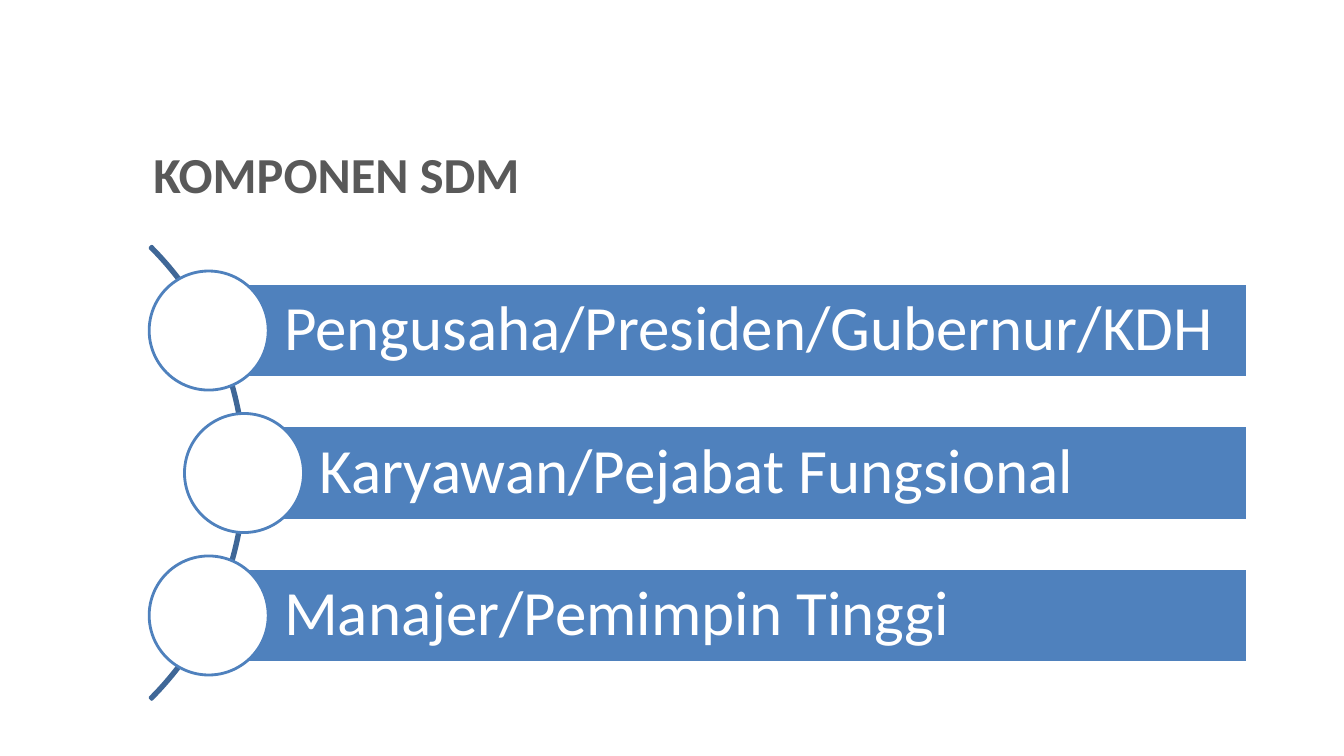
from pptx import Presentation
from pptx.dml.color import RGBColor
from pptx.enum.shapes import MSO_SHAPE
from pptx.enum.text import MSO_ANCHOR, MSO_AUTO_SIZE, PP_ALIGN
from pptx.util import Cm, Pt

WHITE = RGBColor(0xFF, 0xFF, 0xFF)
BLUE = RGBColor(0x4F, 0x81, 0xBD)
NAVY = RGBColor(0x3F, 0x67, 0x97)
GRAY = RGBColor(0x59, 0x59, 0x59)
ROLES = [
    ("Pengusaha/Presiden/Gubernur/KDH", 5.26),
    ("Karyawan/Pejabat Fungsional", 6.15),
    ("Manajer/Pemimpin Tinggi", 5.26),
]
RIGHT, MIDDLE, PITCH = 31.45, 11.92, 3.59
HEIGHT, DOT = 2.38, 3


def add_form(slide, kind, box, fill, line):
    """Add a preset shape at box (left, top, width, height in cm)."""
    form = slide.shapes.add_shape(kind, *map(Cm, box))
    form.shadow.inherit = False
    if fill is None:
        form.fill.background()
    else:
        form.fill.solid()
        form.fill.fore_color.rgb = fill
    form.line.color.rgb = line
    form.line.width = Pt(2)
    return form


def set_text(shape, text, size, color, bold=False):
    """Write one left-aligned line of Calibri into a shape."""
    frame = shape.text_frame
    frame.text = text
    frame.word_wrap = True
    frame.auto_size = MSO_AUTO_SIZE.NONE
    para = frame.paragraphs[0]
    para.alignment = PP_ALIGN.LEFT
    font = para.runs[0].font
    font.name, font.size, font.bold = "Calibri", Pt(size), bold
    font.color.rgb = color
    return frame


def add_title(slide, text):
    """Place and format the title placeholder."""
    title = slide.shapes.title
    title.left, title.top = Cm(3.61), Cm(3.48)
    title.width, title.height = Cm(27.99), Cm(1.19)
    frame = set_text(title, text, 36, GRAY, True)
    frame.vertical_anchor = MSO_ANCHOR.TOP


def add_arc(slide):
    """Draw the thin arc that links the roles."""
    arc = add_form(slide, MSO_SHAPE.BLOCK_ARC, (-9.96, 3.84, 16.15, 16.15), None, NAVY)
    for i, value in enumerate((189, 27, 0.004)):
        arc.adjustments[i] = value


def add_role(slide, text, left, mid):
    """Draw a labelled bar with a circle centred on its left edge."""
    box = (left, mid - HEIGHT / 2, RIGHT - left, HEIGHT)
    bar = add_form(slide, MSO_SHAPE.RECTANGLE, box, BLUE, WHITE)
    frame = set_text(bar, text, 45, WHITE)
    frame.vertical_anchor = MSO_ANCHOR.MIDDLE
    frame.margin_left = Cm(1.9)
    frame.margin_top = frame.margin_right = frame.margin_bottom = Cm(0.3)
    frame.paragraphs[0].line_spacing = 0.9
    box = (left - DOT / 2, mid - DOT / 2, DOT, DOT)
    add_form(slide, MSO_SHAPE.OVAL, box, WHITE, BLUE)


def main():
    """Build and save the slide."""
    deck = Presentation()
    deck.slide_width, deck.slide_height = Cm(33.87), Cm(19.05)
    slide = deck.slides.add_slide(deck.slide_layouts[5])
    add_title(slide, "KOMPONEN SDM")
    add_arc(slide)
    for i, (text, left) in enumerate(ROLES):
        add_role(slide, text, left, MIDDLE + (i - 1) * PITCH)
    deck.save("out.pptx")


if __name__ == "__main__":
    main()
